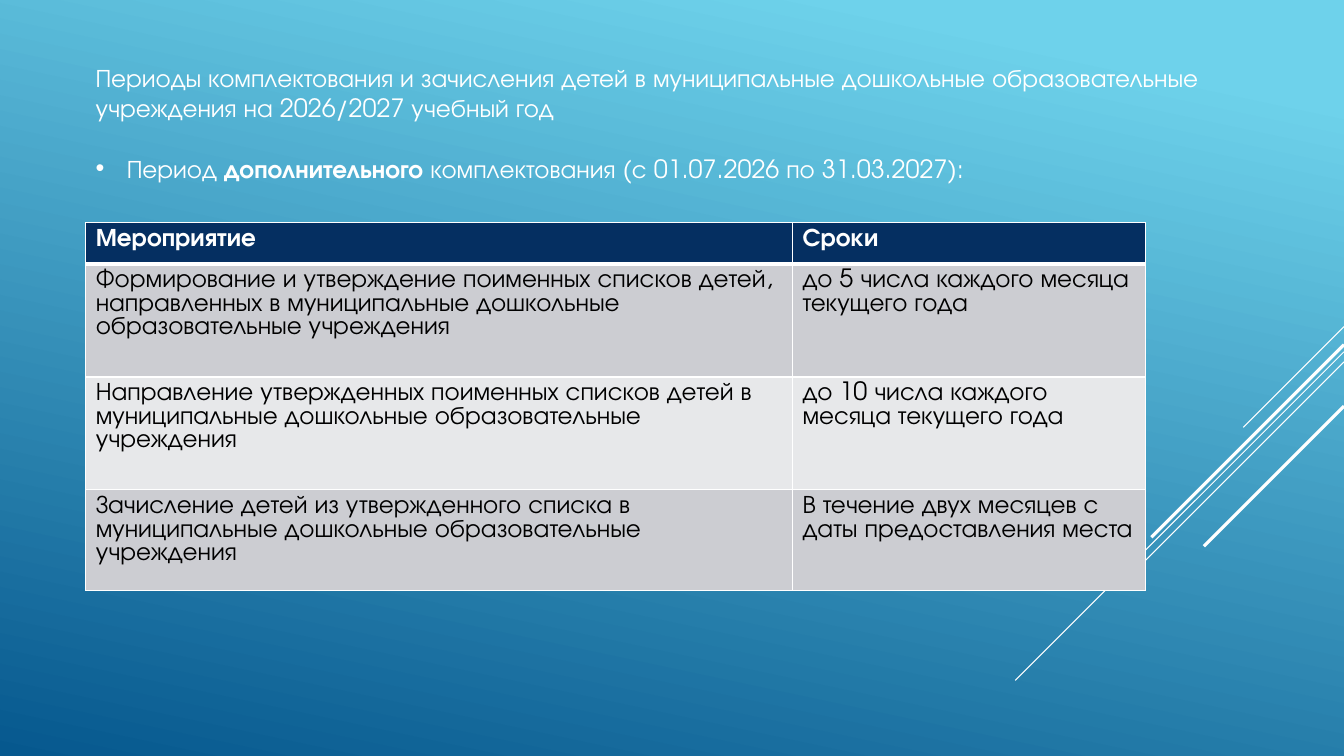
"""Build the slide on enrolment periods for preschool institutions."""
from dataclasses import dataclass

from lxml.etree import SubElement
from pptx import Presentation
from pptx.dml.color import RGBColor
from pptx.enum.shapes import MSO_CONNECTOR
from pptx.oxml.ns import qn
from pptx.slide import Slide
from pptx.table import _Cell
from pptx.text.text import _Paragraph
from pptx.util import Inches, Pt

FONT = "TeX Gyre Adventor"
WHITE, BLACK, NAVY = "FFFFFF", "000000", "052F61"
BANDS = ("CCCDD2", "E7E8EA")
SLIDE_WIDTH = 13.33


@dataclass
class Diagonal:
    """A 45-degree line that starts at the right edge of the slide."""
    top: float
    length: float
    weight: float


@dataclass
class TableRow:
    """One table row with its height in inches."""
    event: str
    term: str
    height: float


DIAGONALS = (
    Diagonal(3.24, 1.0, 0.75),
    Diagonal(3.49, 3.26, 0.75),
    Diagonal(3.59, 2.07, 0.75),
    Diagonal(3.42, 1.91, 2.25),
    Diagonal(4.03, 1.39, 2.25),
)
ROWS = (
    TableRow("Мероприятие", "Сроки", 0.41),
    TableRow("Формирование и утверждение поименных списков детей, направленных в "
             "муниципальные дошкольные образовательные учреждения",
             "до 5 числа каждого месяца текущего года", 1.12),
    TableRow("Направление утвержденных поименных списков детей в "
             "муниципальные дошкольные образовательные учреждения",
             "до 10 числа каждого месяца текущего года", 1.12),
    TableRow("Зачисление детей из утвержденного списка в "
             "муниципальные дошкольные образовательные учреждения",
             "В течение двух месяцев с даты предоставления места", 1.0),
)
COLUMN_WIDTHS = (7.01, 3.5)


def color(value: str) -> RGBColor:
    """Turn a hex string into a colour."""
    return RGBColor.from_string(value)


def add_run(paragraph: _Paragraph, text: str, fill: str, bold: bool = False) -> None:
    """Append one run in the slide font."""
    run = paragraph.add_run()
    run.text = text
    run.font.name = FONT
    run.font.size = Pt(18)
    run.font.bold = bold
    run.font.color.rgb = color(fill)


def paint_background(slide: Slide) -> None:
    """Fill the background with the blue gradient."""
    fill = slide.background.fill
    fill.gradient()
    fill.gradient_angle = 258
    for stop, position, value in zip(fill.gradient_stops, (0.1, 1.0), ("6ED2EB", "06588E")):
        stop.position = position
        stop.color.rgb = color(value)


def draw_diagonal(slide: Slide, diagonal: Diagonal) -> None:
    """Draw one decorative line."""
    connector = slide.shapes.add_connector(
        MSO_CONNECTOR.STRAIGHT, Inches(SLIDE_WIDTH), Inches(diagonal.top),
        Inches(SLIDE_WIDTH - diagonal.length), Inches(diagonal.top + diagonal.length))
    connector.line.color.rgb = color(WHITE)
    connector.line.width = Pt(diagonal.weight)
    SubElement(connector._element.spPr, qn("a:effectLst"))


def draw_heading(slide: Slide) -> None:
    """Write the heading and the bulleted period."""
    box = slide.shapes.add_textbox(Inches(0.85), Inches(0.57), Inches(11.6), Inches(1.31))
    frame = box.text_frame
    frame.word_wrap = True
    add_run(frame.paragraphs[0],
            "Периоды комплектования и зачисления детей в муниципальные дошкольные "
            "образовательные учреждения на 2026/2027 учебный год", WHITE)

    period = frame.add_paragraph()
    properties = period._p.get_or_add_pPr()
    properties.set("marL", str(Inches(0.31)))
    properties.set("indent", str(-Inches(0.31)))
    SubElement(properties, qn("a:buFont"), typeface="Arial")
    SubElement(properties, qn("a:buChar"), char="•")
    period.space_before = Pt(21.6)
    add_run(period, "Период ", WHITE)
    add_run(period, "дополнительного", WHITE, bold=True)
    add_run(period, " комплектования (с 01.07.2026 по 31.03.2027):", WHITE)


def set_borders(cell: _Cell, top: float, bottom: float) -> None:
    """Give a cell white borders, one point wide at the sides."""
    properties = cell._tc.get_or_add_tcPr()
    for side, weight in (("L", 1), ("R", 1), ("T", top), ("B", bottom)):
        line = SubElement(properties, qn(f"a:ln{side}"), w=str(Pt(weight)))
        SubElement(SubElement(line, qn("a:solidFill")), qn("a:srgbClr"), val=WHITE)


def draw_table(slide: Slide) -> None:
    """Draw the table of events and terms."""
    table = slide.shapes.add_table(
        len(ROWS), len(COLUMN_WIDTHS), Inches(0.85), Inches(2.21),
        Inches(sum(COLUMN_WIDTHS)), Inches(sum(row.height for row in ROWS))).table
    for column, width in zip(table.columns, COLUMN_WIDTHS):
        column.width = Inches(width)
    for index, row in enumerate(ROWS):
        table.rows[index].height = Inches(row.height)
        is_header = index == 0
        for column_index, text in enumerate((row.event, row.term)):
            cell = table.cell(index, column_index)
            set_borders(cell, 3 if index == 1 else 1, 3 if is_header else 1)
            cell.fill.solid()
            cell.fill.fore_color.rgb = color(NAVY if is_header else BANDS[(index - 1) % 2])
            add_run(cell.text_frame.paragraphs[0], text,
                    WHITE if is_header else BLACK, bold=is_header)


def main() -> None:
    """Assemble and save the presentation."""
    presentation = Presentation()
    presentation.slide_width = Inches(SLIDE_WIDTH)
    presentation.slide_height = Inches(7.5)
    slide = presentation.slides.add_slide(presentation.slide_layouts[6])
    paint_background(slide)
    for diagonal in DIAGONALS:
        draw_diagonal(slide, diagonal)
    draw_heading(slide)
    draw_table(slide)
    presentation.save("out.pptx")


if __name__ == "__main__":
    main()
